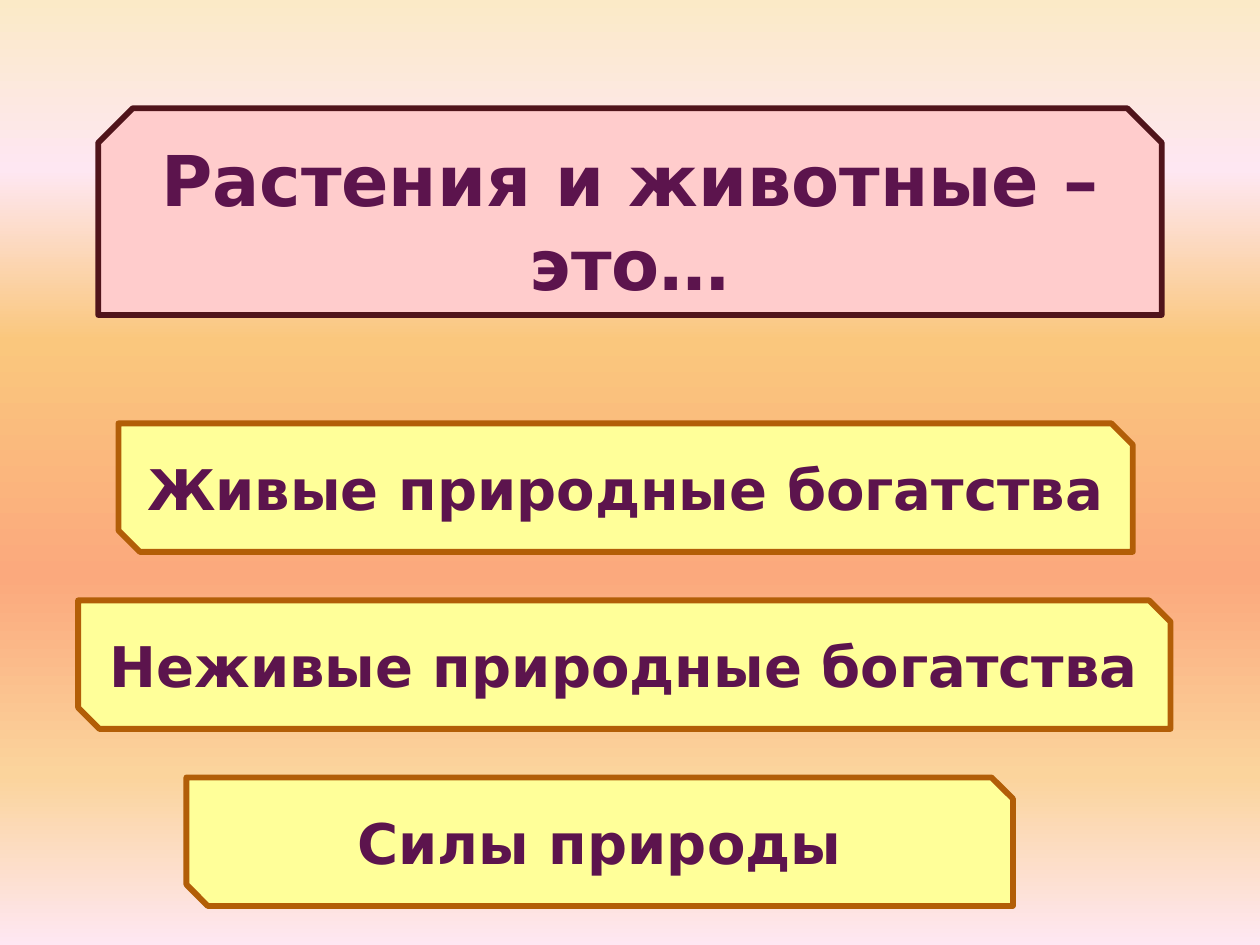
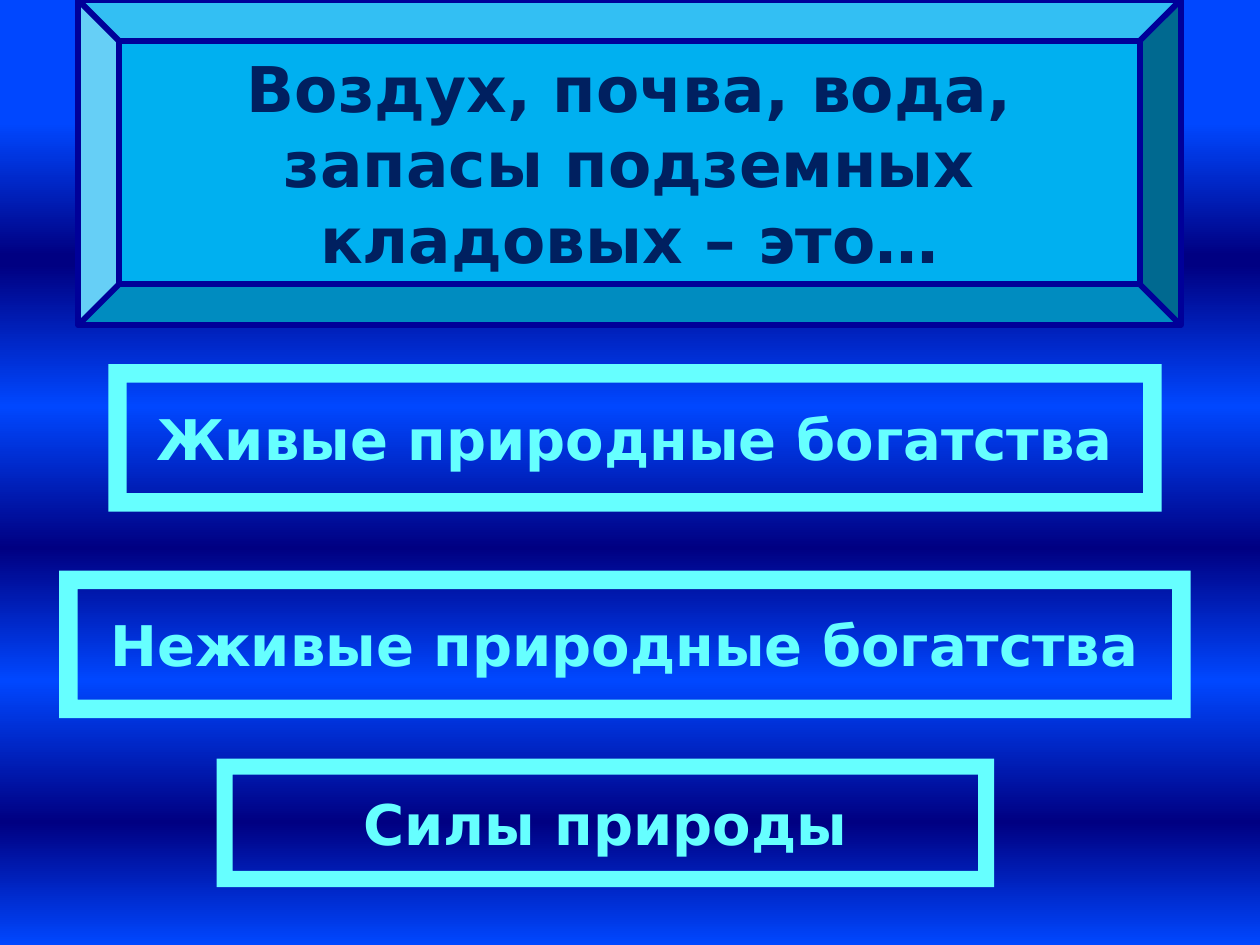
from lxml.etree import SubElement
from pptx import Presentation
from pptx.dml.color import RGBColor
from pptx.enum.shapes import MSO_SHAPE
from pptx.enum.text import MSO_ANCHOR, PP_ALIGN
from pptx.oxml.ns import qn
from pptx.util import Inches, Pt

FONT = "DejaVu Sans"
COLUMNS, ROWS = 100, 75
LINE_WIDTH = Pt(3.35)
ANSWER_SIZE = 32

# Colours of the warm slide
PINK = RGBColor(0xFF, 0xCC, 0xCC)
MAROON = RGBColor(0x50, 0x14, 0x1B)
PLUM = RGBColor(0x5C, 0x14, 0x4D)
YELLOW = RGBColor(0xFF, 0xFF, 0x99)
BROWN = RGBColor(0xB2, 0x5E, 0x07)
CREAM = RGBColor(0xFB, 0xEA, 0xC7)
ROSE = RGBColor(0xFE, 0xE7, 0xF2)
AMBER = RGBColor(0xFA, 0xC7, 0x7D)
SALMON = RGBColor(0xFB, 0xA9, 0x7D)
SAND = RGBColor(0xFB, 0xD4, 0x9C)

# Colours of the blue slide
SKY = RGBColor(0x00, 0xB0, 0xF0)
INDIGO = RGBColor(0x00, 0x00, 0x99)
DARK_BLUE = RGBColor(0x00, 0x20, 0x60)
AQUA = RGBColor(0x66, 0xFF, 0xFF)
BRIGHT_BLUE = RGBColor(0x00, 0x47, 0xFF)
NAVY = RGBColor(0x00, 0x00, 0x82)

# Gradient stops: percentage from the top, colour
SUNSET = [(0, CREAM), (18, ROSE), (36, AMBER), (61, SALMON), (82, SAND), (100, ROSE)]
WAVES = [(13, BRIGHT_BLUE), (27, NAVY), (28, NAVY), (43, BRIGHT_BLUE),
         (58, NAVY), (72, BRIGHT_BLUE), (87, NAVY), (100, BRIGHT_BLUE)]

ANSWERS = ["Живые природные богатства", "Неживые природные богатства", "Силы природы"]


class QuizDeck:
    def __init__(self):
        self.presentation = Presentation()
        self.presentation.slide_width = Inches(10)
        self.presentation.slide_height = Inches(7.5)
        self.column = self.presentation.slide_width / COLUMNS
        self.row = self.presentation.slide_height / ROWS
        self.slide = None

    def add_slide(self, stops):
        """Start a blank slide with a vertical gradient background."""
        self.slide = self.presentation.slides.add_slide(self.presentation.slide_layouts[6])
        fill = self.slide.background.fill
        fill.gradient()
        fill.gradient_angle = 270
        stop_list = next(self.slide.element.iter(qn("a:gsLst")))
        for old_stop in list(stop_list):
            stop_list.remove(old_stop)
        for percent, color in stops:
            stop = SubElement(stop_list, qn("a:gs"), pos=str(percent * 1000))
            SubElement(stop, qn("a:srgbClr"), val=str(color))

    def panel(self, kind, area, text, size, text_color, fill_color, line_color=None):
        """Add a filled shape with centred bold text; area is in grid units."""
        left, top, width, height = area
        shape = self.slide.shapes.add_shape(
            kind, round(left * self.column), round(top * self.row),
            round(width * self.column), round(height * self.row))
        shape.shadow.inherit = False
        shape.fill.solid()
        shape.fill.fore_color.rgb = fill_color
        if line_color is None:
            shape.line.fill.background()
        else:
            shape.line.color.rgb = line_color
            shape.line.width = LINE_WIDTH

        text_frame = shape.text_frame
        text_frame.word_wrap = True
        text_frame.vertical_anchor = MSO_ANCHOR.MIDDLE
        paragraph = text_frame.paragraphs[0]
        paragraph.text = text
        paragraph.alignment = PP_ALIGN.CENTER
        paragraph.font.name = FONT
        paragraph.font.size = Pt(size)
        paragraph.font.bold = True
        paragraph.font.color.rgb = text_color

    def answers(self, kind, areas, text_color, fill_color, line_color=None):
        """Add the three answer options, one per area."""
        for area, text in zip(areas, ANSWERS):
            self.panel(kind, area, text, ANSWER_SIZE, text_color, fill_color, line_color)


def main():
    deck = QuizDeck()

    # Plants and animals
    deck.add_slide(SUNSET)
    deck.panel(MSO_SHAPE.SNIP_2_SAME_RECTANGLE, (7.8, 8.6, 84.4, 16.4),
               "Растения и животные – это…", 40, PLUM, PINK, MAROON)
    columns = [(9.4, 80.5), (6.2, 86.7), (14.8, 65.6)]
    areas = [(left, 33.6 + 14.05 * index, width, 10.2)
             for index, (left, width) in enumerate(columns)]
    deck.answers(MSO_SHAPE.SNIP_2_DIAG_RECTANGLE, areas, PLUM, YELLOW, BROWN)

    # Air, soil, water and minerals
    deck.add_slide(WAVES)
    deck.panel(MSO_SHAPE.BEVEL, (6.2, 0, 87.5, 25.8),
               "Воздух, почва, вода, запасы подземных кладовых – это…",
               36, DARK_BLUE, SKY, INDIGO)
    areas = [(8.6, 28.9, 83.6, 11.7), (4.7, 45.3, 89.8, 11.7), (17.2, 60.2, 61.7, 10.2)]
    deck.answers(MSO_SHAPE.FRAME, areas, AQUA, AQUA)

    deck.presentation.save("out.pptx")


if __name__ == "__main__":
    main()
